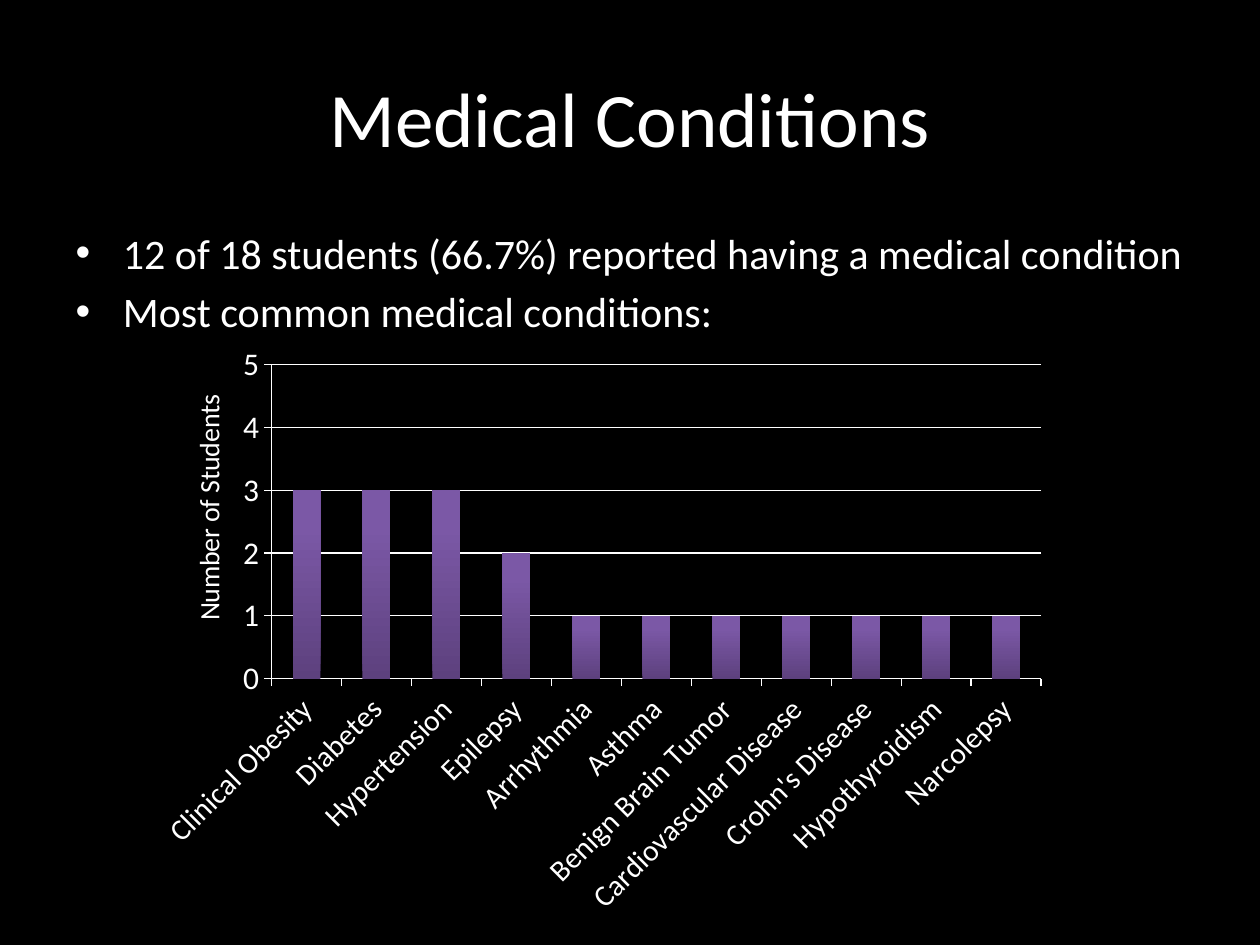
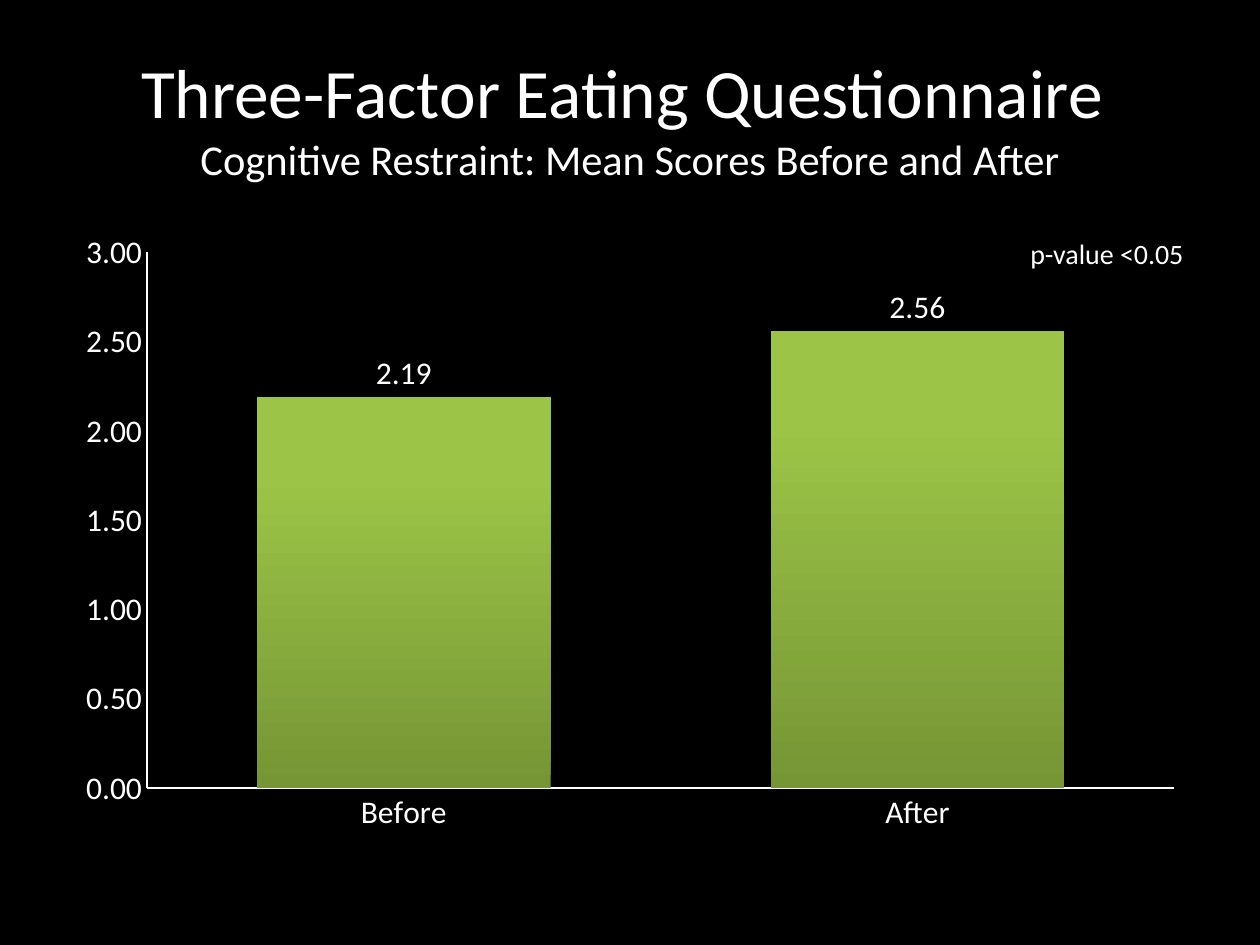
from lxml import etree
from pptx import Presentation
from pptx.chart.data import CategoryChartData
from pptx.dml.color import RGBColor
from pptx.enum.chart import XL_CHART_TYPE as ChartType
from pptx.enum.chart import XL_LABEL_POSITION as LabelPosition
from pptx.enum.chart import XL_TICK_MARK as TickMark
from pptx.enum.text import MSO_ANCHOR, MSO_AUTO_SIZE as AutoSize, PP_ALIGN
from pptx.oxml.ns import qn
from pptx.util import Cm, Pt

BLACK = RGBColor(0x00, 0x00, 0x00)
WHITE = RGBColor(0xFF, 0xFF, 0xFF)
PURPLES = (RGBColor(0x5D, 0x41, 0x7E), RGBColor(0x7B, 0x58, 0xA6))
GREENS = (RGBColor(0x76, 0x95, 0x35), RGBColor(0x9C, 0xC5, 0x47))
FONT = "Calibri"

TITLE_BOX = (1.27, 0.76, 22.86, 3.18)
CONTENT_BOX = (1.27, 4.45, 22.86, 12.57)
CONDITIONS_BOX = (3.18, 6.78, 18.21, 11.86)
P_VALUE_BOX = (20.52, 4.65, 4.22, 0.94)

CONDITIONS = {
    "Clinical Obesity": 3,
    "Diabetes": 3,
    "Hypertension": 3,
    "Epilepsy": 2,
    "Arrhythmia": 1,
    "Asthma": 1,
    "Benign Brain Tumor": 1,
    "Cardiovascular Disease": 1,
    "Crohn's Disease": 1,
    "Hypothyroidism": 1,
    "Narcolepsy": 1,
}
RESTRAINT_SCORES = {"Before": 2.19, "After": 2.56}


def set_attributes(target, values):
    for name, value in values.items():
        setattr(target, name, value)


def place(shape, box):
    names = ("left", "top", "width", "height")
    set_attributes(shape, dict(zip(names, map(Cm, box))))


def style_font(font, size):
    set_attributes(font, {"name": FONT, "size": Pt(size), "bold": False})
    font.color.rgb = WHITE


def add_run(paragraph, text, size):
    run = paragraph.add_run()
    run.text = text
    style_font(run.font, size)


def fill_title(slide, *lines):
    """Write (text, size) lines into the title, parted by line breaks."""
    title = slide.shapes.title
    place(title, TITLE_BOX)
    set_attributes(title.text_frame, {
        "auto_size": AutoSize.NONE,
        "vertical_anchor": MSO_ANCHOR.MIDDLE,
    })
    paragraph = title.text_frame.paragraphs[0]
    paragraph.alignment = PP_ALIGN.CENTER
    for index, (text, size) in enumerate(lines):
        if index:
            paragraph.add_line_break()
        add_run(paragraph, text, size)


def fill_bullets(slide, texts):
    body = slide.placeholders[1]
    place(body, CONTENT_BOX)
    frame = body.text_frame
    frame.auto_size = AutoSize.NONE
    for index, text in enumerate(texts):
        paragraph = frame.add_paragraph() if index else frame.paragraphs[0]
        add_run(paragraph, text, 24)


def add_note(slide, text, box):
    frame = slide.shapes.add_textbox(*map(Cm, box)).text_frame
    set_attributes(frame, {"word_wrap": True, "auto_size": AutoSize.SHAPE_TO_FIT_TEXT})
    add_run(frame.paragraphs[0], text, 16)


def set_layout(parent, position, **fractions):
    """Fix a chart part at fractions of the chart area."""
    for old_layout in parent.findall(qn("c:layout")):
        parent.remove(old_layout)
    layout = etree.Element(qn("c:layout"))
    parent.insert(position, layout)
    manual = etree.SubElement(layout, qn("c:manualLayout"))
    settings = {"xMode": "edge", "yMode": "edge", **fractions}
    if "w" in fractions:
        settings = {"layoutTarget": "inner", **settings}
    for name, value in settings.items():
        etree.SubElement(manual, qn(f"c:{name}")).set("val", str(value))


def style_line(line):
    line.color.rgb = WHITE
    line.width = Pt(0.75)


def add_column_chart(slide, values, box, colors, gap, plot, scale, tick):
    """Add a one-series column chart; plot holds the x, y, w and h fractions."""
    data = CategoryChartData()
    data.categories = values.keys()
    data.add_series("Series 1", values.values())
    frame = slide.shapes.add_chart(ChartType.COLUMN_CLUSTERED, *map(Cm, box), data)
    chart = frame.chart
    set_attributes(chart, {"has_legend": False, "has_title": False})
    style_font(chart.font, 18)
    set_layout(chart.plots[0]._element.getparent(), 0, **dict(zip("xywh", plot)))

    set_attributes(chart.plots[0], {"gap_width": gap, "vary_by_categories": False})
    fill = chart.series[0].format.fill
    fill.gradient()
    fill.gradient_angle = 90
    for stop, color, position in zip(fill.gradient_stops, colors, (0, 0.8)):
        stop.color.rgb = color
        stop.position = position

    for axis in (chart.category_axis, chart.value_axis):
        set_attributes(axis, {
            "major_tick_mark": tick,
            "minor_tick_mark": TickMark.NONE,
            "has_major_gridlines": False,
        })
        style_line(axis.format.line)
    set_attributes(chart.value_axis, scale)
    return chart


def add_conditions_chart(slide):
    chart = add_column_chart(
        slide, CONDITIONS, CONDITIONS_BOX, PURPLES, gap=150,
        plot=(0.126, 0.048, 0.852, 0.534), tick=TickMark.OUTSIDE,
        scale={"minimum_scale": 0, "maximum_scale": 5, "major_unit": 1})
    category_axis, value_axis = chart.category_axis, chart.value_axis
    style_font(category_axis.tick_labels.font, 17)
    text_properties = category_axis._element.find(qn("c:txPr"))
    text_properties.find(qn("a:bodyPr")).set("rot", str(-45 * 60000))

    value_axis.has_major_gridlines = True
    style_line(value_axis.major_gridlines.format.line)
    title = value_axis.axis_title
    add_run(title.text_frame.paragraphs[0], "Number of Students", 16)
    title.text_frame._txBody.find(qn("a:bodyPr")).set("rot", str(-90 * 60000))
    set_layout(title._element, 1, x=0.03, y=0.09)


def add_scores_chart(slide):
    chart = add_column_chart(
        slide, RESTRAINT_SCORES, CONTENT_BOX, GREENS, gap=75,
        plot=(0.074, 0.051, 0.906, 0.859), tick=TickMark.NONE,
        scale={"minimum_scale": 0, "maximum_scale": 3, "major_unit": 0.5})
    number_format = {"number_format": "0.00", "number_format_is_linked": False}
    set_attributes(chart.value_axis.tick_labels, number_format)
    labels = chart.series[0].data_labels
    set_attributes(labels, {
        **number_format,
        "show_value": True,
        "position": LabelPosition.OUTSIDE_END,
    })
    style_font(labels.font, 18)


def main():
    presentation = Presentation()
    set_attributes(presentation, {"slide_width": Cm(25.4), "slide_height": Cm(19.05)})
    background = presentation.slide_master.background.fill
    background.solid()
    background.fore_color.rgb = BLACK
    layouts = presentation.slide_layouts

    conditions = presentation.slides.add_slide(layouts.get_by_name("Title and Content"))
    fill_title(conditions, ("Medical Conditions", 44))
    fill_bullets(conditions, [
        "12 of 18 students (66.7%) reported having a medical condition",
        "Most common medical conditions:",
    ])
    add_conditions_chart(conditions)

    questionnaire = presentation.slides.add_slide(layouts.get_by_name("Title Only"))
    fill_title(
        questionnaire,
        ("Three-Factor Eating Questionnaire ", 39.6),
        ("Cognitive Restraint: Mean Scores Before and After", 24.3))
    add_scores_chart(questionnaire)
    add_note(questionnaire, "p-value <0.05", P_VALUE_BOX)

    presentation.save("out.pptx")


if __name__ == "__main__":
    main()
